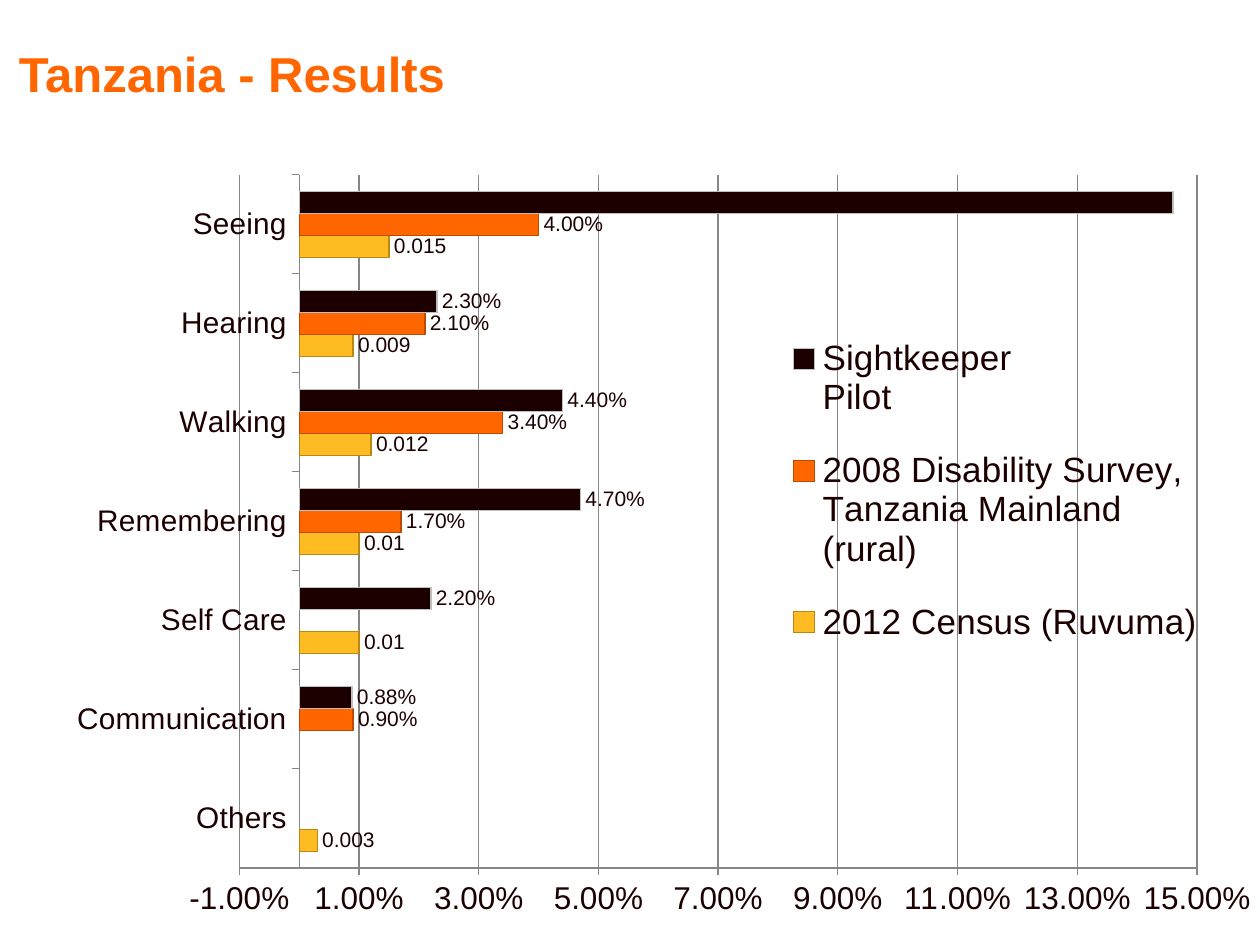
from dataclasses import dataclass

from lxml.etree import SubElement
from pptx import Presentation
from pptx.chart.data import CategoryChartData
from pptx.dml.color import RGBColor
from pptx.enum.chart import (XL_CHART_TYPE, XL_LABEL_POSITION,
                             XL_LEGEND_POSITION, XL_TICK_MARK)
from pptx.enum.text import MSO_ANCHOR
from pptx.oxml import parse_xml
from pptx.oxml.ns import nsdecls, qn
from pptx.util import Pt

SCALE = 914400 / 126
FONT = "Arial"
INK, ORANGE, GOLD, GREY = "1C0000", "FF6600", "FFBB22", "868686"


@dataclass
class Series:
    name: str
    values: list
    fill: str
    edge: str
    form: str


CATS = ["Others", "Communication", "Self Care", "Remembering",
        "Walking", "Hearing", "Seeing"]
SERIES = [
    Series("2012 Census (Ruvuma)",
           [0.003, None, 0.01, 0.01, 0.012, 0.009, 0.015],
           GOLD, "BC8710", "General"),
    Series("2008 Disability Survey, Tanzania Mainland (rural)",
           [None, 0.009, None, 0.017, 0.034, 0.021, 0.04],
           ORANGE, "BC4A00", "0.00%"),
    Series("Sightkeeper\nPilot",
           [None, 0.0088, 0.022, 0.047, 0.044, 0.023, 0.146],
           INK, "BFBFBF", "0.00%"),
]


def px(n: int) -> int:
    return round(n * SCALE)


def rgb(code: str) -> RGBColor:
    return RGBColor.from_string(code)


def style(font, size: int, code: str = INK, bold: bool = False) -> None:
    font.name, font.size, font.bold = FONT, Pt(size), bold
    font.color.rgb = rgb(code)


def stroke(line, code: str = GREY) -> None:
    line.color.rgb = rgb(code)
    line.width = Pt(0.75)


def place(node, x: float, y: float, w: float, h: float, inner: bool = False) -> None:
    """Set a manual layout, in parts of the chart, on a plot area or legend."""
    for old in node.findall(qn("c:layout")):
        node.remove(old)
    layout = parse_xml(f"<c:layout {nsdecls('c')}/>")
    manual = SubElement(layout, qn("c:manualLayout"))
    rows = [("layoutTarget", "inner")] if inner else []
    rows += [("xMode", "edge"), ("yMode", "edge"),
             ("x", x), ("y", y), ("w", w), ("h", h)]
    for tag, val in rows:
        SubElement(manual, qn(f"c:{tag}")).set("val", str(val))
    if inner:
        node.insert(0, layout)
    else:
        node.find(qn("c:legendPos")).addnext(layout)


def hide_label(labels, point: int) -> None:
    item = parse_xml(f'<c:dLbl {nsdecls("c")}><c:idx val="{point}"/>'
                     '<c:delete val="1"/></c:dLbl>')
    labels.insert(0, item)


def add_title(slide, text: str) -> None:
    frame = slide.shapes.add_textbox(px(19), px(40), px(869), px(66)).text_frame
    frame.word_wrap = True
    frame.vertical_anchor = MSO_ANCHOR.MIDDLE
    frame.margin_left = frame.margin_right = 0
    frame.margin_top = frame.margin_bottom = 0
    run = frame.paragraphs[0].add_run()
    run.text = text
    style(run.font, 28, ORANGE, True)


def paint(bar, data: Series) -> None:
    bar.invert_if_negative = False
    bar.format.fill.solid()
    bar.format.fill.fore_color.rgb = rgb(data.fill)
    stroke(bar.format.line, data.edge)
    labels = bar.data_labels
    labels.show_value = True
    labels.number_format = data.form
    labels.number_format_is_linked = False
    labels.position = XL_LABEL_POSITION.OUTSIDE_END
    style(labels.font, 12)


def set_axes(chart) -> None:
    cat, val = chart.category_axis, chart.value_axis
    for axis, size in ((cat, 17), (val, 18)):
        axis.major_tick_mark = XL_TICK_MARK.OUTSIDE
        axis.minor_tick_mark = XL_TICK_MARK.NONE
        style(axis.tick_labels.font, size)
        stroke(axis.format.line)
    cat.has_major_gridlines = False
    val.has_major_gridlines = True
    stroke(val.major_gridlines.format.line)
    val.minimum_scale, val.maximum_scale, val.major_unit = -0.01, 0.15, 0.02
    val.tick_labels.number_format = "0.00%"
    val.tick_labels.number_format_is_linked = False


def add_bars(slide) -> None:
    data = CategoryChartData()
    data.categories = CATS
    for item in SERIES:
        data.add_series(item.name, item.values, item.form)
    chart = slide.shapes.add_chart(XL_CHART_TYPE.BAR_CLUSTERED, 0, px(174),
                                   px(1260), px(771), data).chart
    chart.has_title = False
    style(chart.font, 18)
    plot = chart.plots[0]
    plot.gap_width, plot.overlap = 150, 0
    plot.vary_by_categories = False
    for bar, item in zip(plot.series, SERIES):
        paint(bar, item)
    hide_label(plot.series[2].data_labels._element, CATS.index("Seeing"))
    set_axes(chart)
    chart.has_legend = True
    legend = chart.legend
    legend.position = XL_LEGEND_POSITION.RIGHT
    legend.include_in_layout = False
    style(legend.font, 20)
    place(legend._element, 0.62, 0.17, 0.34, 0.48)
    place(chart._chartSpace.chart.plotArea, 0.19, 0, 0.76, 0.9, True)


def main() -> None:
    deck = Presentation()
    deck.slide_width, deck.slide_height = px(1260), px(945)
    slide = deck.slides.add_slide(deck.slide_layouts[6])
    add_title(slide, "Tanzania - Results")
    add_bars(slide)
    deck.save("out.pptx")


if __name__ == "__main__":
    main()
